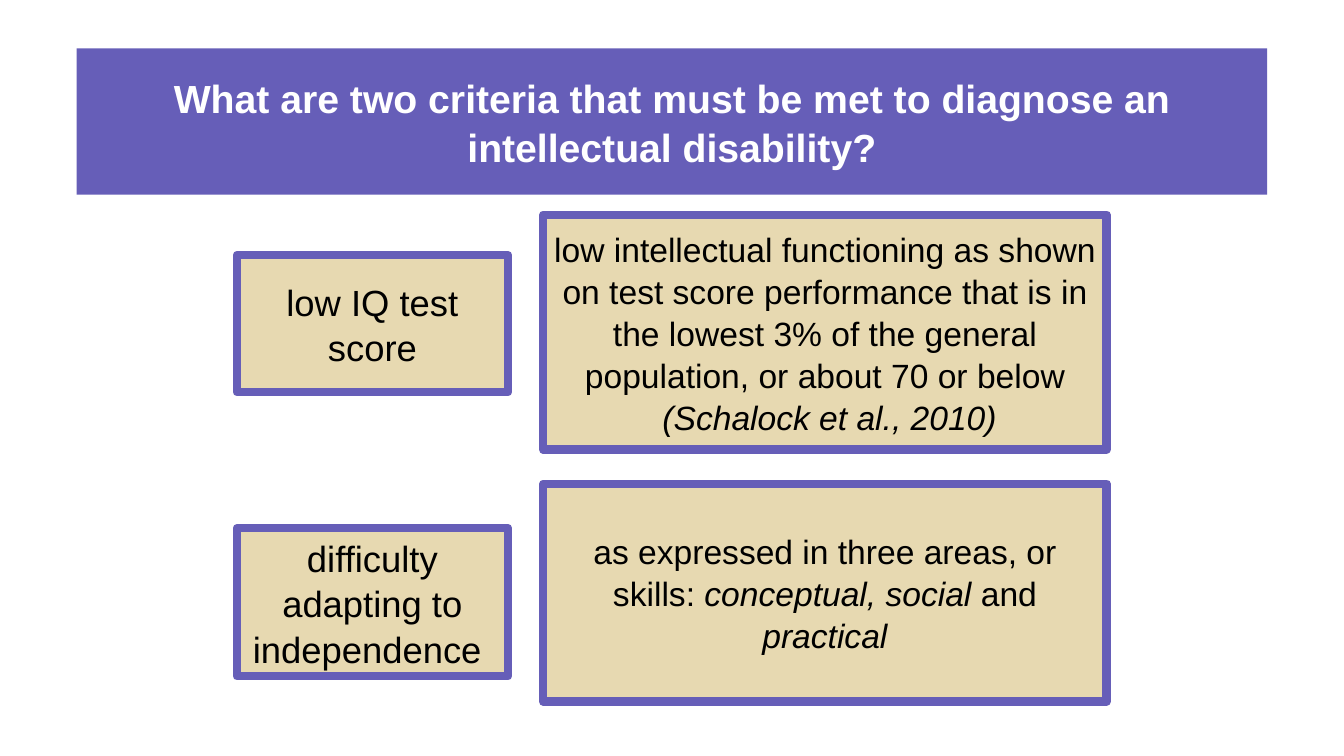
from pptx import Presentation
from pptx.dml.color import RGBColor
from pptx.enum import shapes, text
from pptx.util import Pt

PURPLE = RGBColor(0x66, 0x5E, 0xB8)
SAND = RGBColor(0xE7, 0xD9, 0xB1)
WHITE = RGBColor(0xFF, 0xFF, 0xFF)
BLACK = RGBColor(0, 0, 0)

FRAME = {"word_wrap": True, "auto_size": text.MSO_AUTO_SIZE.NONE,
         "vertical_anchor": text.MSO_ANCHOR.MIDDLE}
PARA = {"alignment": text.PP_ALIGN.CENTER, "line_spacing": 1.04, "space_before": Pt(0)}


def assign(item, values):
    for name, value in values.items():
        setattr(item, name, value)


def write(shape, paras, size, color, bold=False):
    """Fill a shape with centred paragraphs, each a list of (words, italic)."""
    frame = shape.text_frame
    assign(frame, FRAME)
    for i, runs in enumerate(paras):
        para = frame.add_paragraph() if i else frame.paragraphs[0]
        assign(para, PARA)
        for words, italic in runs:
            run = para.add_run()
            run.text = words
            assign(run.font, {"name": "Arial", "size": Pt(size), "bold": bold, "italic": italic})
            run.font.color.rgb = color


deck = Presentation()
assign(deck, {"slide_width": Pt(960), "slide_height": Pt(540)})
slide = deck.slides.add_slide(deck.slide_layouts[5])

title = slide.shapes.title
assign(title, {"left": Pt(54.7), "top": Pt(34.6), "width": Pt(850.4), "height": Pt(104.4)})
title.fill.solid()
title.fill.fore_color.rgb = PURPLE
write(title, [[("What are two criteria that must be met to diagnose an "
                "intellectual disability?", False)]], 28, WHITE, True)

# Columns: left, width, text size
TERM = (169.2, 193.7, 26)
DETAIL = (388, 402.5, 24)
# Boxes: column, top, height, paragraphs
boxes = [
    (TERM, 182.2, 97.9, [[("low IQ test score", False)]]),
    (DETAIL, 153.4, 167.8, [
        [("low intellectual functioning as shown on test score performance that is in "
          "the lowest 3% of the general population, or about 70 or below", False)],
        [(" (Schalock et al., 2010)", True)]]),
    (TERM, 377.3, 105.8, [[("difficulty adapting to independence ", False)]]),
    (DETAIL, 345.6, 155.5, [
        [("as expressed in three areas, or skills: ", False), ("conceptual, social ", True),
         ("and ", False), ("practical", True)]]),
]
for (left, width, size), top, height, paras in boxes:
    box = slide.shapes.add_shape(shapes.MSO_SHAPE.RECTANGLE,
                                 Pt(left), Pt(top), Pt(width), Pt(height))
    box.shadow.inherit = False
    box.fill.solid()
    box.fill.fore_color.rgb = SAND
    box.line.color.rgb = PURPLE
    box.line.width = Pt(6)
    write(box, paras, size, BLACK)

deck.save("out.pptx")
